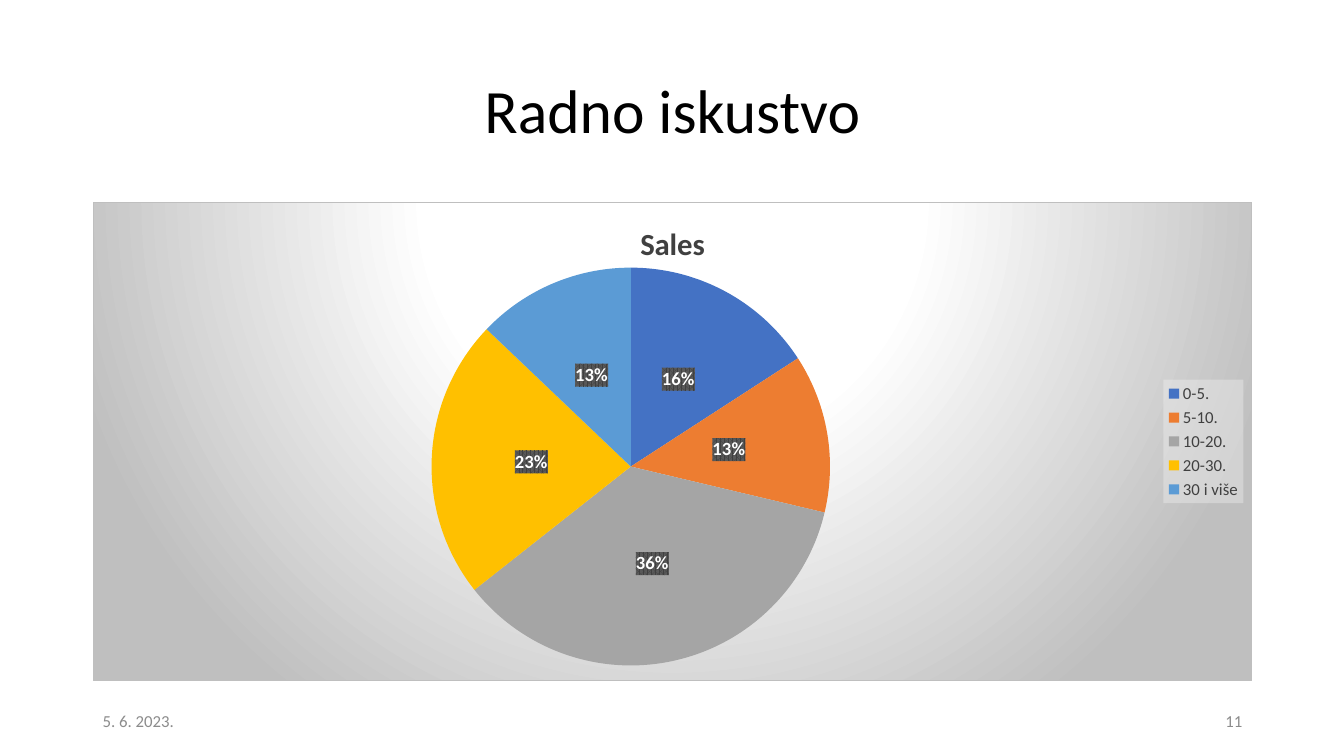
from lxml.etree import fromstring
from pptx import Presentation
from pptx.chart.data import CategoryChartData
from pptx.dml.color import RGBColor
from pptx.enum.chart import XL_CHART_TYPE, XL_LABEL_POSITION, XL_LEGEND_POSITION
from pptx.enum.text import MSO_ANCHOR, PP_ALIGN
from pptx.util import Inches, Pt

# Content
HEADING = "Radno iskustvo"
DATE = "5. 6. 2023."
PAGE_NUMBER = "11"
SERIES = "Sales"
EXPERIENCE = {"0-5.": 16, "5-10.": 13, "10-20.": 36, "20-30.": 23, "30 i više": 13}

THEME = {
    "font": "Calibri",
    "heading": {"size": 44, "color": "000000"},
    "footer": {"size": 12, "color": "8C8C8C"},
    "chart": {"size": 10, "color": "000000"},
    "chart_title": {"size": 22, "color": "404040", "bold": True},
    "legend": {"size": 12, "color": "404040"},
    "label": {"size": 13.3, "color": "FFFFFF", "bold": True},
    "slices": ["4472C4", "ED7D31", "A5A5A5", "FFC000", "5B9BD5"],
    "label_pattern": ("404040", "595959"),
    "legend_fill": ("F2F2F2", 39),
    "backdrop": [(0, "FFFFFF"), (39, "FFFFFF"), (100, "BFBFBF")],
    "border": "BFBFBF",
}

# Layout in inches
SLIDE_W, SLIDE_H, MARGIN = 13.33, 7.5, 0.92
CONTENT_W = 11.5
FOOTER_TOP, FOOTER_W, FOOTER_H = 6.95, 3, 0.4
HEADING_BOX = (MARGIN, 0.4, CONTENT_W, 1.45)
CHART_BOX = (MARGIN, 2, CONTENT_W, 4.76)
DATE_BOX = (MARGIN, FOOTER_TOP, FOOTER_W, FOOTER_H)
PAGE_BOX = (MARGIN + CONTENT_W - FOOTER_W, FOOTER_TOP, FOOTER_W, FOOTER_H)
PIE_AREA = {"x": 0.292, "y": 0.137, "w": 0.344, "h": 0.831}

NAMESPACES = ('xmlns:c="http://schemas.openxmlformats.org/drawingml/2006/chart" '
              'xmlns:a="http://schemas.openxmlformats.org/drawingml/2006/main"')
NO_LINE = "<a:ln><a:noFill/></a:ln>"


def set_all(target, values):
    for key, value in values.items():
        setattr(target, key, value)


def style_font(font, role):
    style = dict(THEME[role], name=THEME["font"])
    style["size"] = Pt(style["size"])
    font.color.rgb = RGBColor.from_string(style.pop("color"))
    set_all(font, style)


def add_text(slide, box, text, role, align):
    frame = slide.shapes.add_textbox(*map(Inches, box)).text_frame
    set_all(frame, {"word_wrap": True, "vertical_anchor": MSO_ANCHOR.MIDDLE})
    paragraph = frame.paragraphs[0]
    paragraph.alignment = align
    run = paragraph.add_run()
    run.text = text
    style_font(run.font, role)
    return paragraph


def fill_before_text(element, fill):
    """Put shape properties ahead of the text properties of a chart part."""
    properties = fromstring(f"<c:spPr {NAMESPACES}>{fill}</c:spPr>")
    element.find("{*}txPr").addprevious(properties)


def legend_fill():
    color, opacity = THEME["legend_fill"]
    return (f'<a:solidFill><a:srgbClr val="{color}"><a:alpha val="{opacity * 1000}"/>'
            f'</a:srgbClr></a:solidFill>{NO_LINE}')


def label_fill():
    front, back = THEME["label_pattern"]
    return (f'<a:pattFill prst="pct75"><a:fgClr><a:srgbClr val="{front}"/></a:fgClr>'
            f'<a:bgClr><a:srgbClr val="{back}"/></a:bgClr></a:pattFill>{NO_LINE}')


def backdrop_fill():
    stops = "".join(f'<a:gs pos="{at * 1000}"><a:srgbClr val="{color}"/></a:gs>'
                    for at, color in THEME["backdrop"])
    return (f'<a:gradFill><a:gsLst>{stops}</a:gsLst><a:path path="circle">'
            '<a:fillToRect l="50000" t="-80000" r="50000" b="180000"/></a:path></a:gradFill>'
            f'<a:ln w="{Pt(0.75)}"><a:solidFill><a:srgbClr val="{THEME["border"]}"/>'
            '</a:solidFill></a:ln>')


def place_pie(plot_area):
    for layout in plot_area.findall("{*}layout"):
        plot_area.remove(layout)
    modes = "".join(f'<c:{side}Mode val="edge"/>' for side in "xy")
    sizes = "".join(f'<c:{side} val="{value}"/>' for side, value in PIE_AREA.items())
    plot_area.insert(0, fromstring(
        f'<c:layout {NAMESPACES}><c:manualLayout><c:layoutTarget val="inner"/>'
        f'{modes}{sizes}</c:manualLayout></c:layout>'))


def add_experience_chart(slide):
    data = CategoryChartData()
    data.categories = list(EXPERIENCE)
    data.add_series(SERIES, list(EXPERIENCE.values()))
    chart = slide.shapes.add_chart(
        XL_CHART_TYPE.PIE, *map(Inches, CHART_BOX), data).chart
    style_font(chart.font, "chart")
    fill_before_text(chart.element, backdrop_fill())
    place_pie(chart.element.find(".//{*}plotArea"))

    # Chart title
    chart.has_title = True
    title_run = chart.chart_title.text_frame.paragraphs[0].add_run()
    title_run.text = SERIES
    style_font(title_run.font, "chart_title")

    # Legend
    chart.has_legend = True
    set_all(chart.legend, {"position": XL_LEGEND_POSITION.RIGHT,
                           "include_in_layout": False})
    style_font(chart.legend.font, "legend")
    fill_before_text(chart.element.find(".//{*}legend"), legend_fill())

    # Slices and percentages
    plot = chart.plots[0]
    plot.vary_by_categories = True
    pie = plot.series[0]
    for index, color in enumerate(THEME["slices"]):
        slice_fill = pie.points[index].format.fill
        slice_fill.solid()
        slice_fill.fore_color.rgb = RGBColor.from_string(color)
    set_all(pie.data_labels, {
        "show_percentage": True, "show_value": False, "number_format": "0%",
        "number_format_is_linked": False, "position": XL_LABEL_POSITION.CENTER})
    style_font(pie.data_labels.font, "label")
    fill_before_text(chart.element.find(".//{*}ser/{*}dLbls"), label_fill())


def main():
    deck = Presentation()
    deck.slide_width, deck.slide_height = Inches(SLIDE_W), Inches(SLIDE_H)
    slide = deck.slides.add_slide(deck.slide_layouts[6])
    heading = add_text(slide, HEADING_BOX, HEADING, "heading", PP_ALIGN.CENTER)
    heading.line_spacing = 0.9
    add_experience_chart(slide)
    add_text(slide, DATE_BOX, DATE, "footer", PP_ALIGN.LEFT)
    add_text(slide, PAGE_BOX, PAGE_NUMBER, "footer", PP_ALIGN.RIGHT)
    deck.save("out.pptx")


if __name__ == "__main__":
    main()
